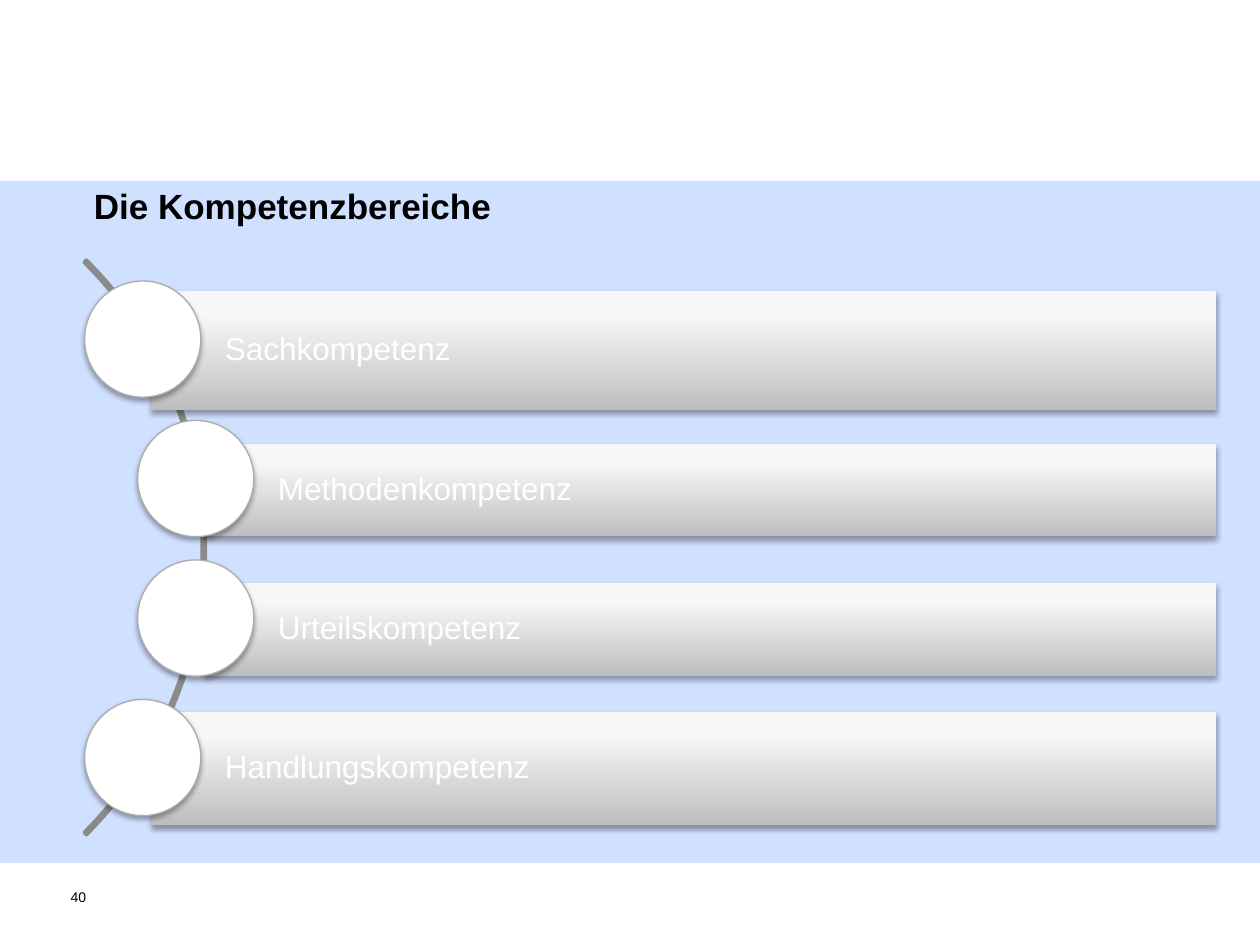
from copy import deepcopy

from lxml.etree import SubElement
from pptx import Presentation
from pptx.dml.color import RGBColor
from pptx.enum.shapes import MSO_SHAPE as Shape
from pptx.enum.text import MSO_ANCHOR as Anchor, PP_ALIGN as Align
from pptx.oxml.ns import qn
from pptx.util import Pt

BLACK = RGBColor(0x00, 0x00, 0x00)
WHITE = RGBColor(0xFF, 0xFF, 0xFF)
BLUE = RGBColor(0x66, 0x99, 0xFF)
ARC_GREY = RGBColor(0x8A, 0x8A, 0x8A)
RIM_GREY = RGBColor(0xAC, 0xAC, 0xAC)
BAR_STOPS = [
    (0, RGBColor(0xBE, 0xBE, 0xBE)),
    (0.8, RGBColor(0xF7, 0xF7, 0xF7)),
    (1, RGBColor(0xF8, 0xF8, 0xF8)),
]


def write(frame, text, size, color, bold=False, insets=(0, 0, 0, 0)):
    sides = ("margin_left", "margin_top", "margin_right", "margin_bottom")
    for side, inset in zip(sides, insets):
        setattr(frame, side, Pt(inset))
    frame.word_wrap = True
    paragraph = frame.paragraphs[0]
    paragraph.alignment = Align.LEFT
    run = paragraph.add_run()
    run.text = text
    run.font.color.rgb = color
    for key, value in {"name": "Arial", "size": Pt(size), "bold": bold}.items():
        setattr(run.font, key, value)
    return paragraph


def cast_shadow(shape):
    shape.shadow.inherit = False
    effects = shape._element.spPr.find(qn("a:effectLst"))
    shadow = SubElement(effects, qn("a:outerShdw"), blurRad=str(Pt(3.1)),
                        dist=str(Pt(1.8)), dir="5400000", rotWithShape="0")
    black = SubElement(shadow, qn("a:srgbClr"), val=str(BLACK))
    SubElement(black, qn("a:alpha"), val="35000")


prs = Presentation()
prs.slide_width, prs.slide_height = Pt(720), Pt(540)
slide = prs.slides.add_slide(prs.slide_layouts[6])
shapes = slide.shapes

backdrop = shapes.add_shape(Shape.RECTANGLE, 0, Pt(103.2), Pt(720), Pt(390))
backdrop.shadow.inherit = False
backdrop.line.fill.background()
backdrop.fill.solid()
backdrop.fill.fore_color.rgb = BLUE
tint = backdrop._element.spPr.find(qn("a:solidFill")).find(qn("a:srgbClr"))
SubElement(tint, qn("a:alpha"), val="30000")

page_number = shapes.add_textbox(Pt(40.3), Pt(507.6), Pt(34.6), Pt(26.6))
write(page_number.text_frame, "40", 8, BLACK)
heading = shapes.add_textbox(Pt(53.6), Pt(105.4), Pt(270), Pt(37.4))
write(heading.text_frame, "Die Kompetenzbereiche", 20, BLACK, bold=True)

arc = shapes.add_shape(Shape.BLOCK_ARC, Pt(-347), Pt(80.6), Pt(464.4), Pt(464.4))
for index, value in enumerate((189, 27, 0.004)):
    arc.adjustments[index] = value
arc.shadow.inherit = False
arc.fill.background()
arc.line.color.rgb = ARC_GREY
arc.line.width = Pt(2)

DIAMETER = 66.4
FIRST_TOP = 160.6
STEP = 79.7
BAR_RIGHT = 694.8
BAR_OFFSET = 38.1
areas = [
    ("Sachkompetenz", 48.4, 166.3, 68.2),
    ("Methodenkompetenz", 78.7, 253.5, 53.1),
    ("Urteilskompetenz", 78.7, 333.2, 53.1),
    ("Handlungskompetenz", 48.4, 406.8, 64.4),
]

for row, (area, circle_left, bar_top, bar_height) in enumerate(areas):
    bar_left = circle_left + BAR_OFFSET
    bar = shapes.add_shape(Shape.RECTANGLE, Pt(bar_left), Pt(bar_top),
                           Pt(BAR_RIGHT - bar_left), Pt(bar_height))
    bar.line.fill.background()
    bar.fill.gradient()
    bar.fill.gradient_angle = 90
    stop_list = bar._element.spPr.find(qn("a:gradFill")).find(qn("a:gsLst"))
    stop_list.append(deepcopy(stop_list[-1]))
    for stop, (position, color) in zip(bar.fill.gradient_stops, BAR_STOPS):
        stop.position = position
        stop.color.rgb = color
    cast_shadow(bar)
    bar.text_frame.vertical_anchor = Anchor.MIDDLE
    label = write(bar.text_frame, area, 18, WHITE, insets=(42, 3.6, 3.6, 3.6))
    label.line_spacing = 0.9
    label.space_after = Pt(6.3)

    circle = shapes.add_shape(Shape.OVAL, Pt(circle_left), Pt(FIRST_TOP + row * STEP),
                              Pt(DIAMETER), Pt(DIAMETER))
    circle.fill.solid()
    circle.fill.fore_color.rgb = WHITE
    circle.line.color.rgb = RIM_GREY
    circle.line.width = Pt(0.75)
    cast_shadow(circle)

prs.save("out.pptx")
